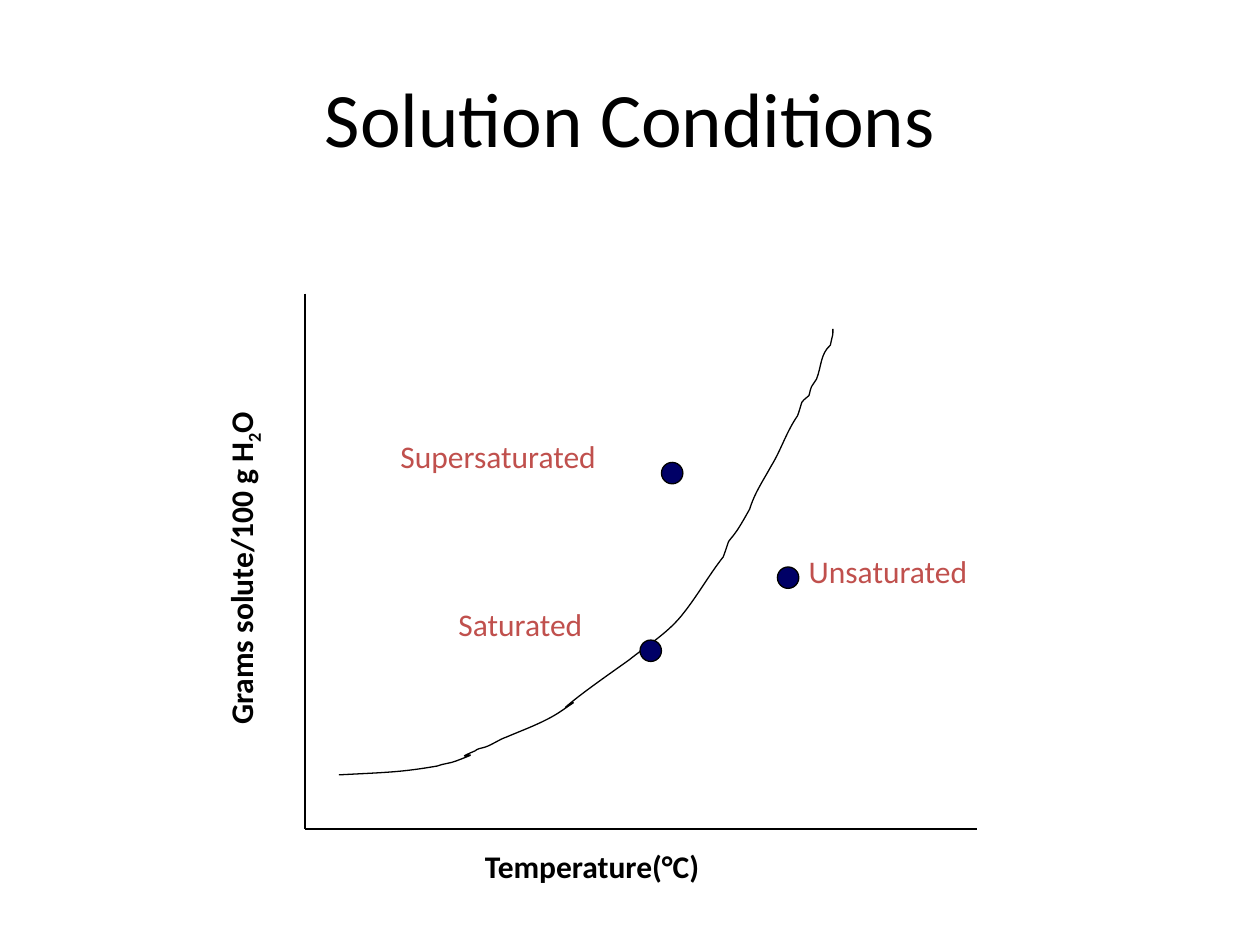
from pptx import Presentation, util as u
from pptx.dml.color import RGBColor
from pptx.enum import shapes, text
from pptx.oxml.ns import qn
from lxml import etree

# Content: positions in inches
TITLE = "Solution Conditions"
BLACK, NAVY, RED = "000000", "000066", "C0504D"
FONT = "Calibri"
AXIS_LEFT, AXIS_RIGHT, AXIS_TOP, AXIS_BOTTOM = 2.42, 7.75, 2.33, 6.58
DOT_SIZE, LABEL_HEIGHT = 0.17, 0.4
UNITS = 1000  # curve units per inch

# (left, top, width), rotation, bold, colour, runs of (wording, baseline)
LABELS = [
    ((0.55, 4.29, 2.72), 270, True, BLACK,
     [("Grams solute/100 g H", 0), ("2", -25000), ("O", 0)]),
    ((3.75, 6.67, 1.92), 0, True, BLACK, [("Temperature(°C)", 0)]),
    ((3.54, 4.75, 1.2), 0, False, RED, [("Saturated", 0)]),
    ((3.08, 3.42, 1.77), 0, False, RED, [("Supersaturated", 0)]),
    ((6.32, 4.33, 1.47), 0, False, RED, [("Unsaturated", 0)]),
]
DOTS = [(5.08, 5.08), (5.25, 3.67), (6.17, 4.5)]

# Solubility curve: a start point, then two handles and an end per Bézier piece
CURVE_START = (2.69, 6.15)
CURVE_PIECES = [
    ((3.07, 6.13), (3.18, 6.13), (3.47, 6.08)),
    ((3.52, 6.06), (3.57, 6.06), (3.62, 6.04)),
    ((3.91, 5.93), (3.53, 6.06), (3.77, 5.96)),
    ((3.79, 5.94), (3.82, 5.94), (3.85, 5.93)),
    ((3.91, 5.91), (3.96, 5.87), (4.02, 5.85)),
    ((4.16, 5.79), (4.33, 5.73), (4.46, 5.64)),
    ((4.72, 5.46), (4.31, 5.75), (4.59, 5.53)),
    ((4.72, 5.43), (4.85, 5.34), (4.99, 5.24)),
    ((5.14, 5.12), (5.31, 5.02), (5.43, 4.86)),
    ((5.54, 4.72), (5.63, 4.56), (5.74, 4.42)),
    ((5.81, 4.23), (5.75, 4.35), (5.85, 4.21)),
    ((5.89, 4.15), (5.95, 4.04), (5.95, 4.04)),
    ((5.99, 3.91), (6.06, 3.81), (6.12, 3.7)),
    ((6.2, 3.57), (6.24, 3.43), (6.33, 3.3)),
    ((6.38, 3.16), (6.34, 3.21), (6.42, 3.14)),
    ((6.43, 3.11), (6.43, 3.09), (6.44, 3.07)),
    ((6.45, 3.05), (6.47, 3.03), (6.48, 3.01)),
    ((6.52, 2.91), (6.51, 2.81), (6.59, 2.74)),
    ((6.61, 2.64), (6.61, 2.68), (6.61, 2.61)),
]


def inches(*lengths):
    return [u.Inches(length) for length in lengths]


def colour(value):
    return RGBColor.from_string(value)


def outline(part):
    part.line.color.rgb = colour(BLACK)
    part.line.width = u.Pt(0.75)


def add_run(paragraph, wording, size, hue, bold=False, baseline=0):
    run = paragraph.add_run()
    run.text = wording
    run.font.name, run.font.size, run.font.bold = FONT, u.Pt(size), bold
    run.font.color.rgb = colour(hue)
    if baseline:
        run._r.get_or_add_rPr().set("baseline", str(baseline))


def add_axis(slide, start, end):
    axis = slide.shapes.add_connector(
        shapes.MSO_CONNECTOR.STRAIGHT, *inches(*start, *end))
    outline(axis)
    etree.SubElement(axis._element.spPr, qn("a:effectLst"))


def curve_units(point):
    return tuple(round(length * UNITS) for length in point)


def add_curve(slide):
    ends = [curve_units(piece[-1]) for piece in CURVE_PIECES]
    start = curve_units(CURVE_START)
    builder = slide.shapes.build_freeform(*start, scale=u.Inches(1) / UNITS)
    builder.add_line_segments(ends, close=False)
    curve = builder.convert_to_shape()
    curve.fill.background()
    curve.shadow.inherit = False
    outline(curve)

    # Bend each straight segment into its Bézier piece
    left, top = (min(axis) for axis in zip(start, *ends))
    segments = list(curve._element.iter(qn("a:lnTo")))
    for segment, piece in zip(segments, CURVE_PIECES):
        bend = etree.Element(qn("a:cubicBezTo"))
        for x, y in map(curve_units, piece):
            etree.SubElement(bend, qn("a:pt"), x=str(x - left), y=str(y - top))
        segment.getparent().replace(segment, bend)


def add_dot(slide, left, top):
    dot = slide.shapes.add_shape(
        shapes.MSO_SHAPE.OVAL, *inches(left, top, DOT_SIZE, DOT_SIZE))
    dot.shadow.inherit = False
    dot.fill.solid()
    dot.fill.fore_color.rgb = colour(NAVY)
    outline(dot)


def add_label(slide, place, rotation, bold, hue, runs):
    label = slide.shapes.add_textbox(*inches(*place, LABEL_HEIGHT))
    label.rotation = rotation
    frame = label.text_frame
    frame.word_wrap = False
    frame.auto_size = text.MSO_AUTO_SIZE.SHAPE_TO_FIT_TEXT
    for wording, baseline in runs:
        add_run(frame.paragraphs[0], wording, 18, hue, bold, baseline)


def main():
    deck = Presentation()
    deck.slide_width, deck.slide_height = inches(10, 7.5)
    slide = deck.slides.add_slide(deck.slide_layouts[5])

    # Title
    title = slide.shapes.title
    title.left, title.top, title.width, title.height = inches(0.5, 0.3, 9, 1.25)
    title.text_frame.vertical_anchor = text.MSO_ANCHOR.MIDDLE
    heading = title.text_frame.paragraphs[0]
    heading.alignment = text.PP_ALIGN.CENTER
    add_run(heading, TITLE, 44, BLACK)

    # Axes, curve, then the marked conditions
    origin = (AXIS_LEFT, AXIS_BOTTOM)
    add_axis(slide, (AXIS_LEFT, AXIS_TOP), origin)
    add_axis(slide, origin, (AXIS_RIGHT, AXIS_BOTTOM))
    add_curve(slide)
    for left, top in DOTS:
        add_dot(slide, left, top)
    for label in LABELS:
        add_label(slide, *label)

    deck.save("out.pptx")


if __name__ == "__main__":
    main()
